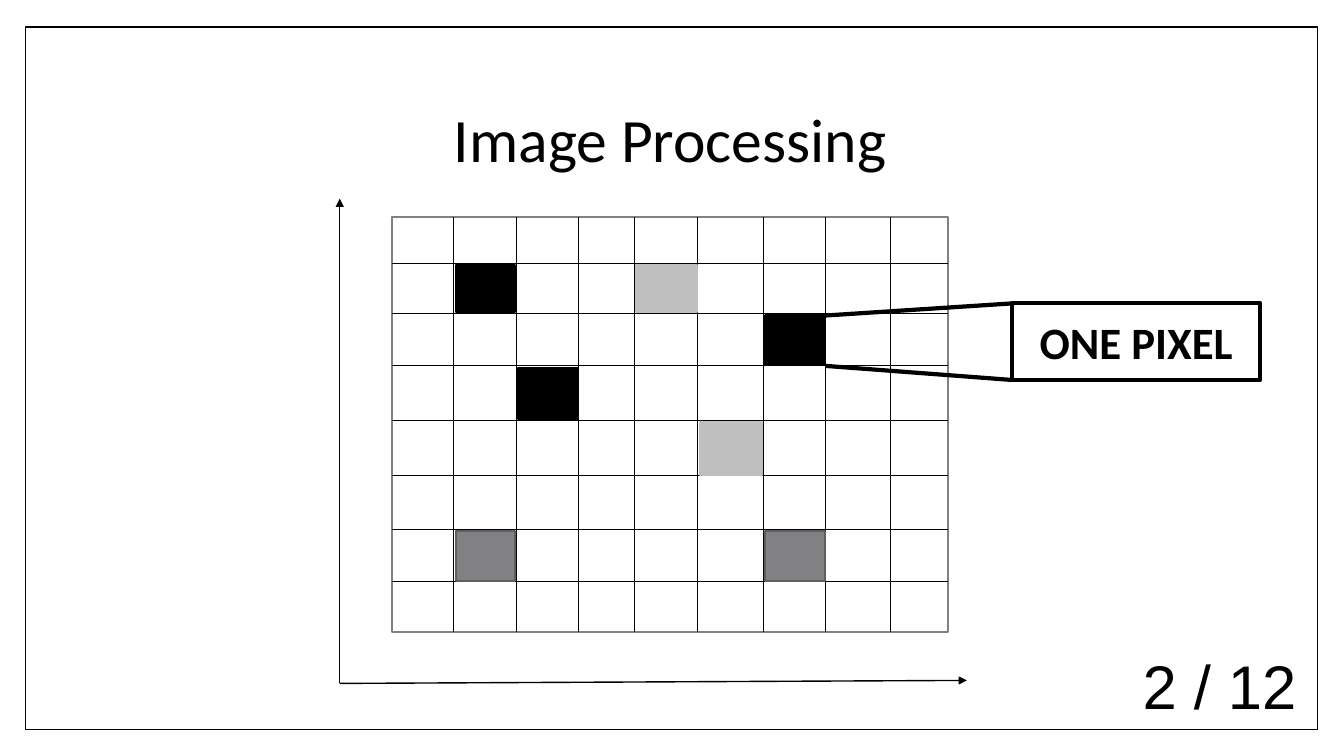
from itertools import pairwise

from lxml import etree
from pptx import Presentation
from pptx.dml.color import RGBColor
from pptx.enum.shapes import MSO_CONNECTOR, MSO_SHAPE
from pptx.enum.text import MSO_ANCHOR, PP_ALIGN
from pptx.oxml.ns import qn
from pptx.util import Pt

RECT = MSO_SHAPE.RECTANGLE
STRAIGHT = MSO_CONNECTOR.STRAIGHT
MIDDLE = MSO_ANCHOR.MIDDLE
CENTER, RIGHT = PP_ALIGN.CENTER, PP_ALIGN.RIGHT

EMU_PER_PX = 9144
BLACK, WHITE = "000000", "FFFFFF"
LIGHT, GREY, DARK_GREY = "BFBFBF", "818183", "5F5F61"

COLUMNS = [389, 450, 512, 574, 629, 692, 757, 819, 883, 940]
ROWS = [215, 261, 311, 363, 417, 472, 525, 577, 627]
PIXELS = [
    (1, 1, BLACK, BLACK),
    (2, 3, BLACK, BLACK),
    (6, 2, BLACK, BLACK),
    (6, 6, GREY, DARK_GREY),
    (1, 6, GREY, DARK_GREY),
    (5, 4, LIGHT, LIGHT),
    (4, 1, LIGHT, LIGHT),
]


def px(*lengths):
    return [length * EMU_PER_PX for length in lengths]


def color(value):
    return RGBColor.from_string(value)


class PixelSlide:
    """Draws styled boxes, lines and text on one slide."""

    def __init__(self, presentation):
        self.shapes = presentation.slides.add_slide(presentation.slide_layouts[6]).shapes

    def box(self, left, top, width, height, fill, outline, weight):
        box = self.shapes.add_shape(RECT, *px(left, top, width, height))
        box.shadow.inherit = False
        box.fill.solid()
        box.fill.fore_color.rgb = color(fill)
        box.line.color.rgb = color(outline)
        box.line.width = Pt(weight)
        return box

    def line(self, start, end, weight, arrow=False):
        line = self.shapes.add_connector(STRAIGHT, *px(*start, *end))
        line.line.color.rgb = color(BLACK)
        line.line.width = Pt(weight)
        properties = line._element.spPr
        if arrow:
            etree.SubElement(properties.find(qn("a:ln")), qn("a:tailEnd"), type="triangle")
        etree.SubElement(properties, qn("a:effectLst"))

    def set_text(self, holder, text, align, spacing=1.0, **font_format):
        frame = holder.text_frame
        frame.word_wrap = True
        frame.vertical_anchor = MIDDLE
        paragraph = frame.paragraphs[0]
        paragraph.text = text
        paragraph.alignment = align
        paragraph.line_spacing = spacing
        font = paragraph.runs[0].font
        font.color.rgb = color(BLACK)
        for name, value in font_format.items():
            setattr(font, name, value)

    def label(self, left, top, width, height, text, align, **text_format):
        holder = self.shapes.add_textbox(*px(left, top, width, height))
        self.set_text(holder, text, align, **text_format)


def main():
    presentation = Presentation()
    presentation.slide_width, presentation.slide_height = px(1333, 750)
    slide = PixelSlide(presentation)

    slide.box(25, 27, 1282, 697, WHITE, BLACK, 1)
    slide.label(125, 67, 1080, 148, "Image Processing", CENTER,
                spacing=0.9, name="Calibri", size=Pt(44))
    slide.label(1029, 659, 267, 40, "2 / 12", RIGHT, name="Arial", size=Pt(44))

    left, right, top, bottom = COLUMNS[0], COLUMNS[-1], ROWS[0], ROWS[-1]
    slide.box(left, top, right - left, bottom - top, WHITE, GREY, 1.5)
    for y in ROWS[1:-1]:
        slide.line((left, y), (right, y), 0.79)
    for x in COLUMNS[1:-1]:
        slide.line((x, top), (x, bottom), 0.79)

    axis_origin = (337, 678)
    for axis_end in [(337, 197), (959, 675)]:
        slide.line(axis_origin, axis_end, 1, arrow=True)

    column_spans, row_spans = list(pairwise(COLUMNS)), list(pairwise(ROWS))
    for column, row, fill, outline in PIXELS:
        cell_left, cell_right = column_spans[column]
        cell_top, cell_bottom = row_spans[row]
        slide.box(cell_left + 2, cell_top + 2, cell_right - cell_left - 3,
                  cell_bottom - cell_top - 3, fill, outline, 1.5)

    for pixel_corner, callout_corner in [((819, 313), (1004, 301)),
                                         ((819, 363), (1004, 377))]:
        slide.line(pixel_corner, callout_corner, 3)
    callout = slide.box(1004, 301, 246, 76, WHITE, BLACK, 3)
    slide.set_text(callout, "ONE PIXEL", CENTER, name="Calibri", size=Pt(32), bold=True)

    presentation.save("out.pptx")


if __name__ == "__main__":
    main()
